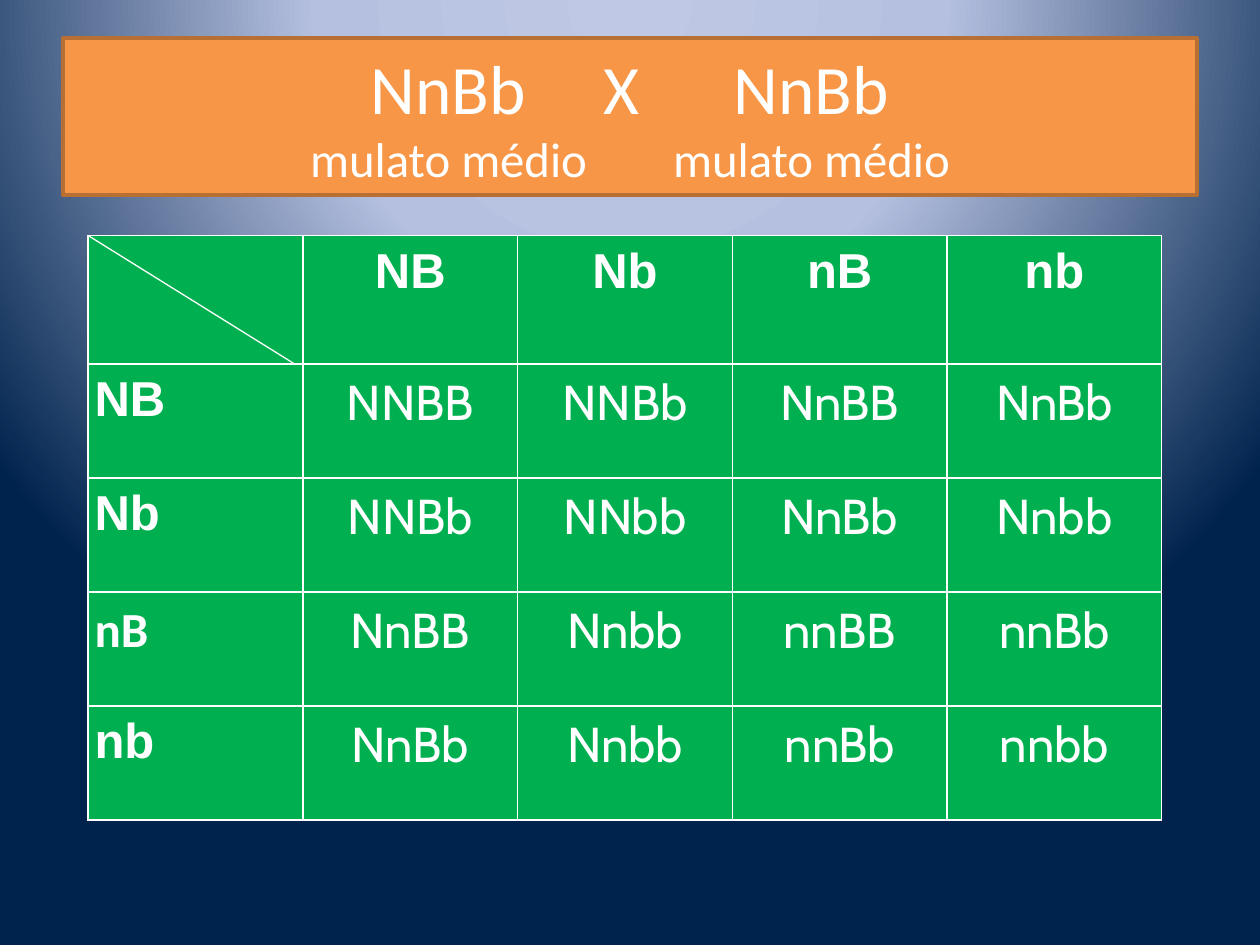
from pptx import Presentation
from pptx.dml.color import RGBColor
from pptx.enum.shapes import MSO_CONNECTOR
from pptx.enum.text import MSO_ANCHOR, MSO_AUTO_SIZE, PP_ALIGN
from pptx.oxml import parse_xml
from pptx.oxml.ns import nsdecls, qn
from pptx.util import Inches, Pt

LEFT, CENTER = PP_ALIGN.LEFT, PP_ALIGN.CENTER
MIDDLE, FIXED = MSO_ANCHOR.MIDDLE, MSO_AUTO_SIZE.NONE
STRAIGHT = MSO_CONNECTOR.STRAIGHT
COLS, ROWS = 100, 75  # layout grid of the slide


def color(code):
    return RGBColor.from_string(code)


def node(tag, inner="", attrs=""):
    return parse_xml(f"<a:{tag} {nsdecls('a')} {attrs}>{inner}</a:{tag}>")


def write(para, text, size=28, font="Calibri", bold=False, align=LEFT,
          space=1.0, ink="FFFFFF"):
    para.alignment, para.line_spacing = align, space
    para.space_before = Pt(0)
    run = para.add_run()
    run.text = text
    run.font.size, run.font.name, run.font.bold = Pt(size), font, bold
    run.font.color.rgb = color(ink)


class Deck:
    white, green = "FFFFFF", "00B050"
    orange, brown = "F79646", "B76F34"

    def __init__(self):
        self.prs = Presentation()
        self.prs.slide_width, self.prs.slide_height = Inches(10), Inches(7.5)
        self.slide = self.prs.slides.add_slide(self.prs.slide_layouts[5])

    def x(self, cols):
        return round(self.prs.slide_width * cols / COLS)

    def y(self, rows):
        return round(self.prs.slide_height * rows / ROWS)

    def backdrop(self, stops, rect):
        self.slide.background.fill.gradient()
        grad = self.slide.element.find(".//" + qn("a:gradFill"))
        for child in list(grad):
            grad.remove(child)
        marks = "".join(f'<a:gs pos="{pos * 1000}"><a:srgbClr val="{code}"/></a:gs>'
                        for pos, code in stops)
        sides = " ".join(f'{side}="{share * 1000}"' for side, share in zip("ltrb", rect))
        grad.append(node("gsLst", marks))
        grad.append(node("path", f"<a:fillToRect {sides}/>", 'path="circle"'))

    def title(self, left, top, width, height, lines, stops):
        box = self.slide.shapes.title
        box.left, box.top = self.x(left), self.y(top)
        box.width, box.height = self.x(width), self.y(height)
        box.fill.solid()
        box.fill.fore_color.rgb = color(self.orange)
        box.line.color.rgb, box.line.width = color(self.brown), Pt(2)
        frame = box.text_frame
        frame.auto_size, frame.vertical_anchor = FIXED, MIDDLE
        for i, (text, size, used) in enumerate(lines):
            para = frame.add_paragraph() if i else frame.paragraphs[0]
            tabs = "".join(f'<a:tab pos="{self.x(stops[n])}" algn="ctr"/>' for n in used)
            para._p.get_or_add_pPr().append(node("tabLst", tabs))
            write(para, text, size=size)

    def edge(self, cell):
        props = cell._tc.get_or_add_tcPr()
        fill = f'<a:solidFill><a:srgbClr val="{self.white}"/></a:solidFill>'
        for i, side in enumerate("LRTB"):
            props.insert(i, node(f"ln{side}", fill, f'w="{Pt(1)}"'))

    def table(self, left, top, width, heights, data, fonts):
        grid = self.slide.shapes.add_table(
            len(data), len(data[0]), self.x(left), self.y(top),
            self.x(width), self.y(sum(heights))).table
        for row, height in zip(grid.rows, heights):
            row.height = self.y(height)
        for r, line in enumerate(data):
            for c, text in enumerate(line):
                cell = grid.cell(r, c)
                cell.fill.solid()
                cell.fill.fore_color.rgb = color(self.green)
                cell.margin_left = cell.margin_right = Inches(0.05)
                cell.margin_top = cell.margin_bottom = 0
                self.edge(cell)
                if text:
                    head = r == 0 or c == 0
                    write(cell.text_frame.paragraphs[0], text, bold=head,
                          font=fonts[r] if head else "Cabin",
                          align=CENTER if c else LEFT, space=1.15)

    def line(self, left, top, right, bottom):
        rule = self.slide.shapes.add_connector(
            STRAIGHT, self.x(left), self.y(top), self.x(right), self.y(bottom))
        rule.line.color.rgb, rule.line.width = color(self.white), Pt(0.75)
        rule._element.spPr.append(node("effectLst"))


def main():
    deck = Deck()
    deck.backdrop([(0, "BFC9E5"), (40, "B5C0E0"), (100, "00234D")], (50, -80, 50, 180))

    # Parents of the cross, centred on shared tab stops
    deck.title(5, 3, 90, 12.5, [
        ("\tNnBb\tX\tNnBb", 39.6, (0, 1, 2)),
        ("\tmulato médio\tmulato médio", 27.9, (0, 2)),
    ], stops=(29.6, 43.3, 58.4))

    # Punnett square
    data = [
        ["", "NB", "Nb", "nB", "nb"],
        ["NB", "NNBB", "NNBb", "NnBB", "NnBb"],
        ["Nb", "NNBb", "NNbb", "NnBb", "Nnbb"],
        ["nB", "NnBB", "Nnbb", "nnBB", "nnBb"],
        ["nb", "NnBb", "Nnbb", "nnBb", "nnbb"],
    ]
    deck.table(7, 18.7, 85.2, [10.2] + [9.05] * 4, data,
               fonts=["Arial", "Arial", "Arial", "Calibri", "Arial"])

    # Diagonal of the corner cell
    deck.line(7, 18.7, 23.4, 28.9)
    deck.prs.save("out.pptx")


if __name__ == "__main__":
    main()
